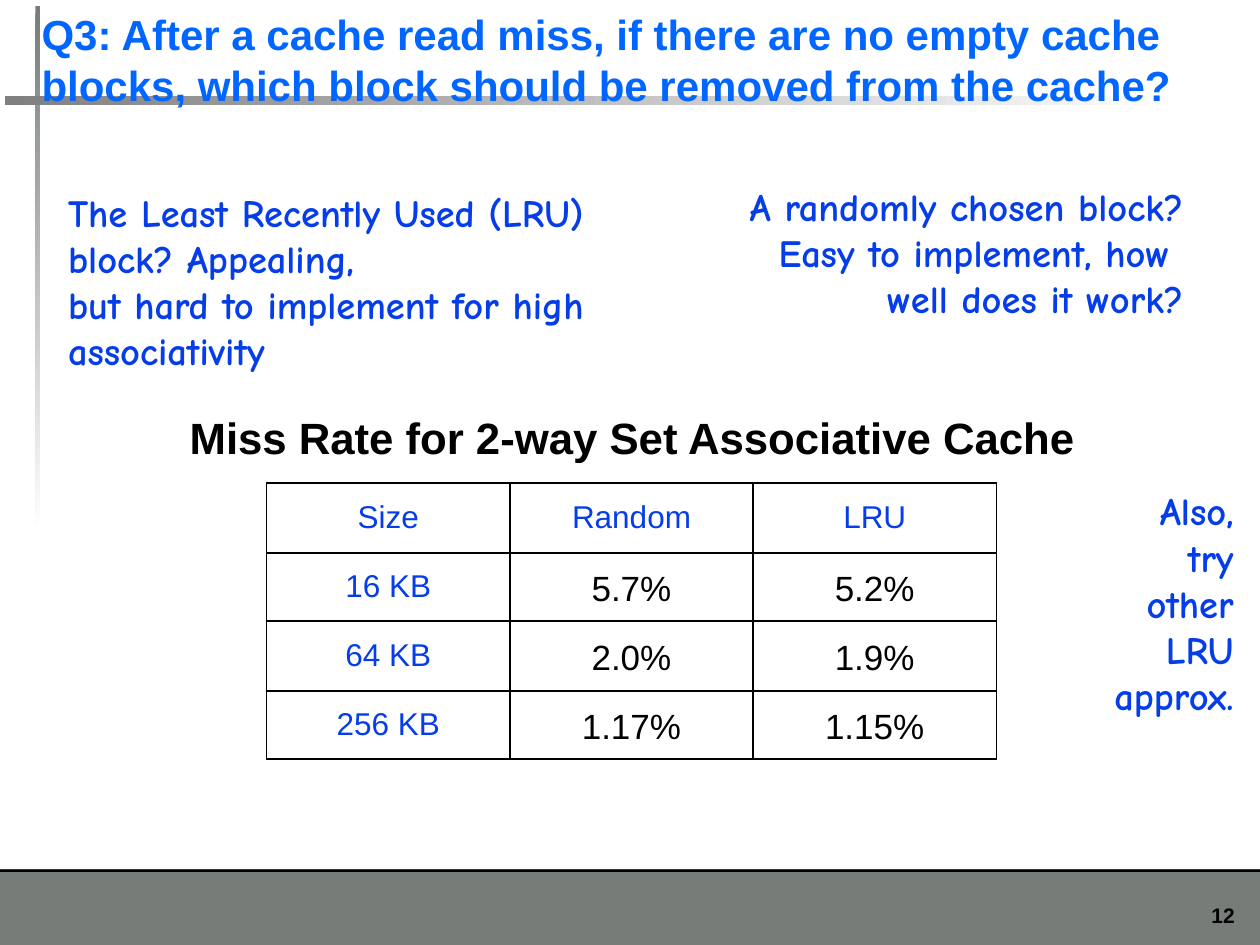
"""Build the cache block replacement slide."""
import pptx
import pptx.dml.color
import pptx.enum.shapes
import pptx.enum.text
import pptx.oxml
import pptx.oxml.ns
import pptx.util

Pt = pptx.util.Pt
ALIGN = pptx.enum.text.PP_ALIGN
ANCHOR = pptx.enum.text.MSO_ANCHOR

BLUE, BLACK, GRAY = "053DE8", "000000", "767D79"
SANS, HAND = "Arial", "Comic Neue"

BARS = [
    {"frame": (0, 496.8, 720, 43.2), "colors": [GRAY]},
    {"frame": (0, 496.8, 720, 1.5), "colors": [BLACK]},
    {"frame": (20.2, 3.6, 2.9, 300), "colors": [GRAY, "FFFFFF"], "angle": 270},
    {"frame": (2.9, 54.7, 674.6, 5.4), "colors": ["808080", "FFFFFF"], "angle": 0},
]
TEXTS = [
    {"frame": (667.5, 516, 38.1, 14), "lines": ["12"],
     "font": (SANS, 12, BLACK), "align": ALIGN.RIGHT - 0 and ALIGN.RIGHT},
    {"frame": (23.76, 3.6, 688, 59), "anchor": ANCHOR.BOTTOM,
     "lines": ["Q3: After a cache read miss, if there are no empty cache blocks, "
               "which block should be removed from the cache?"],
     "font": (SANS, 24, "0066FF"), "align": ALIGN.LEFT},
    {"frame": (352.8, 104.4, 323.3, 79.2),
     "lines": ["A randomly chosen block?", "Easy to implement, how ", "well does it work?"],
     "font": (HAND, 22, BLUE), "align": ALIGN.RIGHT},
    {"frame": (38.9, 108, 295.9, 105.8),
     "lines": ["The Least Recently Used (LRU) block? Appealing,",
               "but hard to implement for high associativity"],
     "font": (HAND, 22, BLUE), "align": ALIGN.LEFT},
    {"frame": (100.1, 234.7, 522, 30.2), "lines": ["Miss Rate for 2-way Set Associative Cache"],
     "font": (SANS, 25, BLACK), "align": ALIGN.CENTER},
    {"frame": (609.1, 278.6, 95.8, 131.8), "lines": ["Also,", "try", "other", "LRU", "approx."],
     "font": (HAND, 22, BLUE), "align": ALIGN.RIGHT},
]
MISS_RATES = [
    ("Size", "Random", "LRU"),
    ("16 KB", "5.7%", "5.2%"),
    ("64 KB", "2.0%", "1.9%"),
    ("256 KB", "1.17%", "1.15%"),
]
TABLE_LEFT, TABLE_TOP, COLUMN_WIDTH = 152.4, 275.9, 139
ROW_HEIGHTS = (40, 39, 40, 39)


def rgb(color):
    return pptx.dml.color.RGBColor.from_string(color)


def points(values):
    return [Pt(value) for value in values]


def style(paragraph, name, size, color, bold, align):
    paragraph.alignment = align
    paragraph.font.name = name
    paragraph.font.size = Pt(size)
    paragraph.font.bold = bold
    paragraph.font.color.rgb = rgb(color)


def add_bar(slide, frame, colors, angle=0):
    rectangle = pptx.enum.shapes.MSO_SHAPE.RECTANGLE
    shape = slide.shapes.add_shape(rectangle, *points(frame))
    shape.shadow.inherit = False
    shape.line.fill.background()
    if len(colors) == 1:
        shape.fill.solid()
        shape.fill.fore_color.rgb = rgb(colors[0])
        return
    shape.fill.gradient()
    shape.fill.gradient_angle = angle
    for stop, color in zip(shape.fill.gradient_stops, colors):
        stop.color.rgb = rgb(color)


def add_text(slide, frame, lines, font, align, anchor=ANCHOR.TOP):
    text_frame = slide.shapes.add_textbox(*points(frame)).text_frame
    text_frame.word_wrap = True
    text_frame.vertical_anchor = anchor
    text_frame.margin_left = text_frame.margin_right = 0
    text_frame.margin_top = text_frame.margin_bottom = 0
    text_frame.text = "\n".join(lines)
    for paragraph in text_frame.paragraphs:
        style(paragraph, *font, True, align)


def add_borders(cell):
    properties = cell._tc.get_or_add_tcPr()
    for index, side in enumerate(("lnL", "lnR", "lnT", "lnB")):
        properties.insert(index, pptx.oxml.parse_xml(
            f'<a:{side} {pptx.oxml.ns.nsdecls("a")} w="{Pt(1)}"><a:solidFill>'
            f'<a:srgbClr val="{BLACK}"/></a:solidFill></a:{side}>'))


def add_miss_rates(slide):
    column_count = len(MISS_RATES[0])
    frame = (TABLE_LEFT, TABLE_TOP, COLUMN_WIDTH * column_count, sum(ROW_HEIGHTS))
    table = slide.shapes.add_table(len(MISS_RATES), column_count, *points(frame)).table
    for column in table.columns:
        column.width = Pt(COLUMN_WIDTH)
    for row_index, values in enumerate(MISS_RATES):
        table.rows[row_index].height = Pt(ROW_HEIGHTS[row_index])
        for column_index, value in enumerate(values):
            is_label = row_index == 0 or column_index == 0
            size, color, spacing = (18, BLUE, 20) if is_label else (20, BLACK, 25)
            cell = table.cell(row_index, column_index)
            cell.text = value
            cell.vertical_anchor = ANCHOR.MIDDLE
            cell.fill.background()
            add_borders(cell)
            paragraph = cell.text_frame.paragraphs[0]
            paragraph.line_spacing = Pt(spacing)
            style(paragraph, SANS, size, color, False, ALIGN.CENTER)


def main():
    presentation = pptx.Presentation()
    presentation.slide_width, presentation.slide_height = Pt(720), Pt(540)
    slide = presentation.slides.add_slide(presentation.slide_layouts[6])
    for bar in BARS:
        add_bar(slide, **bar)
    for text in TEXTS:
        add_text(slide, **text)
    add_miss_rates(slide)
    presentation.save("out.pptx")


if __name__ == "__main__":
    main()
